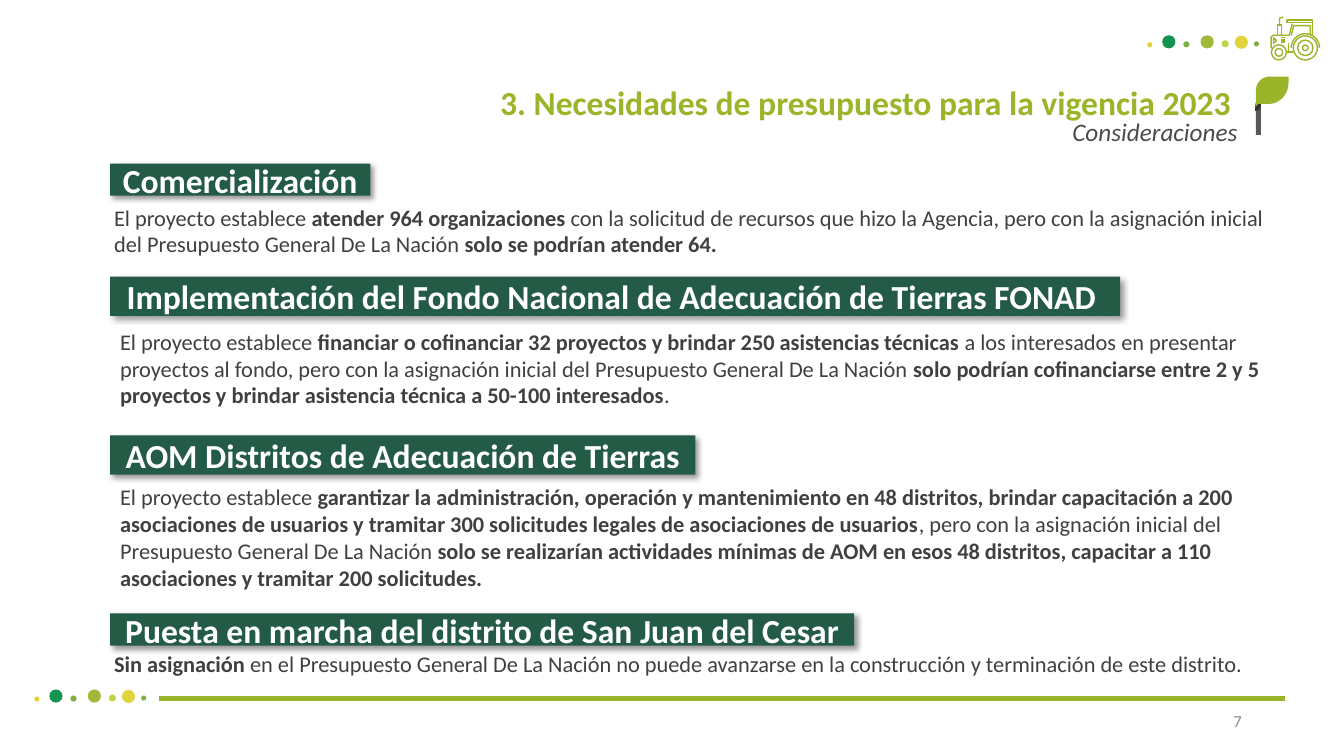
"""Builds the slide on budget needs for 2023."""
from math import cos, pi, sin

from lxml.etree import SubElement
from pptx import Presentation
from pptx.dml.color import RGBColor
from pptx.enum.shapes import MSO_CONNECTOR, MSO_SHAPE
from pptx.enum.text import MSO_ANCHOR, MSO_AUTO_SIZE, PP_ALIGN
from pptx.oxml.ns import qn
from pptx.util import Pt

COLORS = {
    "lime": "9AB52A", "forest": "235B46", "emerald": "139350", "leaf": "7EAE40",
    "olive": "A0B939", "light": "C1D245", "yellow": "E0D43D", "white": "FFFFFF",
    "body": "404040", "subtitle": "4B4B4B", "number": "8C8C8C",
    "stem": "595959", "stem_top": "0D0D0D", "shadow": "000000",
}


def paint(shape, fill=None, line=None):
    """Give a shape a plain fill or outline without a shadow."""
    shape.shadow.inherit = False
    if fill:
        shape.fill.solid()
        shape.fill.fore_color.rgb = RGBColor.from_string(COLORS[fill])
        shape.line.fill.background()
    else:
        shape.fill.background()
        shape.line.color.rgb = RGBColor.from_string(COLORS[line])
        shape.line.width = Pt(1)


def write(shape, runs, size, color, align=PP_ALIGN.LEFT, anchor=MSO_ANCHOR.TOP):
    """Fill a shape with one paragraph of (text, bold) runs."""
    frame = shape.text_frame
    frame.word_wrap = True
    frame.auto_size = MSO_AUTO_SIZE.NONE
    frame.vertical_anchor = anchor
    para = frame.paragraphs[0]
    para.alignment = align
    para.font.name = "Calibri"
    para.font.size = Pt(size)
    para.font.color.rgb = RGBColor.from_string(COLORS[color])
    if len({bold for _, bold in runs}) == 1:
        para.font.bold = runs[0][1]
    for text, bold in runs:
        span = para.add_run()
        span.text = text
        if len(runs) > 1:
            span.font.bold = bold
    return para


deck = Presentation()
deck.slide_width, deck.slide_height = Pt(960), Pt(540)
page = deck.slides.add_slide(deck.slide_layouts[5])
shapes = page.shapes

dots = [
    (0, 0, 3.6, "yellow"), (10.8, -5, 9.4, "emerald"), (25.9, -0.7, 4.3, "leaf"),
    (38.2, -5, 9.4, "olive"), (53.3, -1.4, 5, "light"),
    (62.6, -4.7, 9.4, "yellow"), (76.3, -0.7, 3.6, "leaf"),
]
for left, top in [(819.4, 30.2), (24.5, 497.5)]:
    for x, y, size, color in dots:
        dot = shapes.add_shape(MSO_SHAPE.OVAL, Pt(left + x), Pt(top + y), Pt(size), Pt(size))
        paint(dot, fill=color)

rule = shapes.add_connector(MSO_CONNECTOR.STRAIGHT, Pt(113.8), Pt(499), Pt(918), Pt(499))
rule.line.color.rgb = RGBColor.from_string(COLORS["lime"])
rule.line.width = Pt(3.75)
SubElement(rule._element.spPr, qn("a:effectLst"))

tractor_left, tractor_top = 907.2, 11.5
for x, y, radius in [(25.2, 22.7, 8.6), (25.2, 22.7, 5.5), (25.2, 22.7, 2),
                     (6.3, 25.9, 5.4), (6.3, 25.9, 2.7)]:
    wheel = shapes.add_shape(
        MSO_SHAPE.OVAL, Pt(tractor_left + x - radius), Pt(tractor_top + y - radius),
        Pt(2 * radius), Pt(2 * radius))
    paint(wheel, line="lime")

fender = [(25.2 - 10.1 * cos(pi * i / 16), 22.7 - 10.1 * sin(pi * i / 16)) for i in range(17)]
tractor_parts = [
    (fender, False),
    ([(0.7, 23), (0.7, 15), (2.2, 13.7), (13.7, 13.7), (15.8, 5.4)], False),
    ([(15.1, 14), (16.9, 6.8), (28.8, 6.8), (28.8, 13)], False),
    ([(12.2, 2.9), (30.2, 2.9), (30.2, 4.7), (12.2, 4.7)], True),
    ([(30.2, 4.7), (30.2, 13.7)], False),
    ([(5.4, 13.7), (5.4, 6.5), (8.3, 6.5), (8.3, 13.7)], False),
    ([(6.8, 6.5), (6.8, 1.5), (9.4, 0.7)], False),
    ([(12.2, 25.6), (16.6, 25.6)], False),
    ([(13.3, 19), (13.3, 25.2)], False),
    ([(2.5, 15.5), (4.7, 17.3), (2.5, 19.5)], True),
] + [([(7.6, y), (10.8, y)], False) for y in (15.5, 17, 18.5)]
for points, closed in tractor_parts:
    spots = [((tractor_left + x) * 100, (tractor_top + y) * 100) for x, y in points]
    builder = shapes.build_freeform(*spots[0], scale=Pt(0.01))
    builder.add_line_segments(spots[1:], close=closed)
    paint(builder.convert_to_shape(), line="lime")

stem = shapes.add_shape(MSO_SHAPE.RECTANGLE, Pt(897.1), Pt(73.4), Pt(3.6), Pt(23))
paint(stem, fill="stem")
stem_top = shapes.add_shape(MSO_SHAPE.RECTANGLE, Pt(897.1), Pt(73.4), Pt(3.6), Pt(5.8))
paint(stem_top, fill="stem_top")
stem_top.fill.gradient()
stem_top.fill.gradient_angle = 315
for stop, color in zip(stem_top.fill.gradient_stops, ("stem_top", "stem")):
    stop.color.rgb = RGBColor.from_string(COLORS[color])

leaf_curves = [
    ((907.2, 54.7), (901.4, 54.7), (897.1, 59), (897.1, 64.8)),
    ((897.1, 77), (897.1, 75.6), (898.6, 74.2), (900, 74.2)),
    ((906.5, 74.2), (913.7, 74.2), (920.4, 67.7), (920.4, 59)),
    ((920.4, 54.7),) * 4,
]
leaf_points = [
    tuple(100 * ((1 - t) ** 3 * a + 3 * (1 - t) ** 2 * t * b + 3 * (1 - t) * t ** 2 * c + t ** 3 * d)
          for a, b, c, d in zip(*curve))
    for curve in leaf_curves for t in (i / 12 for i in range(13))
]
builder = shapes.build_freeform(*leaf_points[0], scale=Pt(0.01))
builder.add_line_segments(leaf_points[1:])
paint(builder.convert_to_shape(), fill="lime")

headings = [
    ("Comercialización", 116.8, 185.8, 23),
    ("Implementación del Fondo Nacional de Adecuación de Tierras FONAD ", 197.6, 721.5, 28),
    ("AOM Distritos de Adecuación de Tierras", 311, 418, 28),
    ("Puesta en marcha del distrito de San Juan del Cesar", 438.2, 531.5, 23),
]
for text, top, width, height in headings:
    banner = shapes.add_shape(MSO_SHAPE.RECTANGLE, Pt(78.7), Pt(top), Pt(width), Pt(height))
    paint(banner, fill="forest")
    write(banner, [(text, True)], 24, "white", PP_ALIGN.CENTER, MSO_ANCHOR.MIDDLE)
    effects = banner._element.spPr.find(qn("a:effectLst"))
    shadow = SubElement(effects, qn("a:outerShdw"), blurRad=str(Pt(4)), dist=str(Pt(3)),
                        dir="2700000", algn="tl", rotWithShape="0")
    tint = SubElement(shadow, qn("a:srgbClr"), val=COLORS["shadow"])
    SubElement(tint, qn("a:alpha"), val="40000")

bodies = [
    (74.4, 142, 46, [
        ("El proyecto establece ", False),
        ("atender 964 organizaciones ", True),
        ("con la solicitud de recursos que hizo la Agencia, pero con la asignación inicial "
         "del Presupuesto General De La Nación ", False),
        ("solo se podrían atender 64.", True)]),
    (78.7, 230.6, 65.5, [
        ("El proyecto establece ", False),
        ("financiar o cofinanciar 32 proyectos y brindar 250 asistencias técnicas ", True),
        ("a los interesados en presentar proyectos al fondo, pero con la asignación inicial "
         "del Presupuesto General De La Nación ", False),
        ("solo podrían cofinanciarse entre 2 y 5 proyectos y brindar asistencia técnica "
         "a 50-100 interesados", True),
        (".", False)]),
    (78.7, 341.5, 85, [
        ("El proyecto establece ", False),
        ("garantizar la administración, operación y mantenimiento en 48 distritos, brindar "
         "capacitación a 200 asociaciones de usuarios y tramitar 300 solicitudes legales "
         "de asociaciones de usuarios", True),
        (", pero con la asignación inicial del Presupuesto General De La Nación ", False),
        ("solo se realizarían actividades mínimas de AOM en esos 48 distritos, capacitar "
         "a 110 asociaciones y tramitar 200 solicitudes.", True)]),
    (74.4, 461, 27.4, [
        ("Sin asignación ", True),
        ("en el Presupuesto General De La Nación no puede avanzarse en la construcción "
         "y terminación de este distrito.", False)]),
]
for left, top, height, runs in bodies:
    box = shapes.add_textbox(Pt(left), Pt(top), Pt(841.7), Pt(height))
    write(box, runs, 16, "body")

number = shapes.add_textbox(Pt(678.2), Pt(500.4), Pt(216), Pt(28.8))
write(number, [("7", False)], 12, "number", PP_ALIGN.RIGHT, MSO_ANCHOR.MIDDLE)

title = shapes.title
title.left, title.top, title.width, title.height = Pt(350), Pt(54.7), Pt(544.3), Pt(36)
write(title, [("3. Necesidades de presupuesto para la vigencia 2023", True)], 24, "lime")

subtitle = shapes.add_textbox(Pt(758.9), Pt(79.2), Pt(135.4), Pt(28.8))
write(subtitle, [("Consideraciones", False)], 18, "subtitle").font.italic = True
subtitle.text_frame.word_wrap = False

deck.save("out.pptx")
